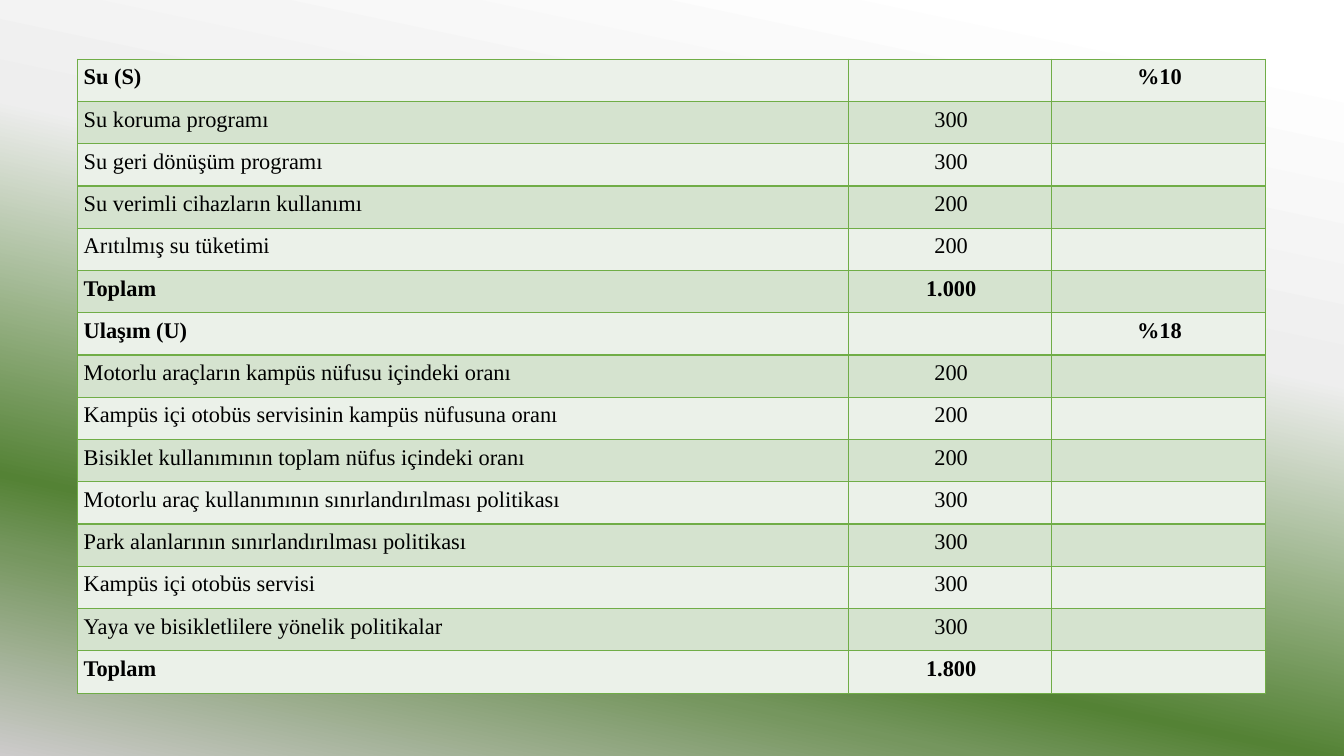
"""Builds a slide with the water and transport scoring table."""
from dataclasses import dataclass

from lxml import etree
from pptx import Presentation
from pptx.dml.color import RGBColor
from pptx.enum.text import PP_ALIGN
from pptx.oxml.ns import qn
from pptx.util import Cm, Pt

LEFT, CENTER = PP_ALIGN.LEFT, PP_ALIGN.CENTER


@dataclass(frozen=True)
class Theme:
    font: str = "Times New Roman"
    size: int = 16
    text: str = "000000"
    border: str = "70AD47"
    bands: tuple = ("EBF1E9", "D5E3CF")
    backdrop: tuple = ((6, "FFFFFF"), (37, "EEEEEE"), (73, "548235"),
                       (80, "75965E"), (100, "CDCBCB"))


theme = Theme()


def write(cell, text, bold=False, align=LEFT, indent=Cm(0)):
    paragraph = cell.text_frame.paragraphs[0]
    paragraph.alignment = align
    paragraph.line_spacing = 1.07
    paragraph.font.size = Pt(theme.size)
    properties = paragraph._p.get_or_add_pPr()
    properties.set("marL", str(indent))
    properties.set("indent", "0")
    if text:
        run = paragraph.add_run()
        run.text = text
        run.font.name = theme.font
        run.font.size = Pt(theme.size)
        run.font.bold = bold
        run.font.color.rgb = RGBColor.from_string(theme.text)


def add_borders(cell):
    properties = cell._tc.get_or_add_tcPr()
    for side in ("lnL", "lnR", "lnT", "lnB"):
        line = etree.SubElement(properties, qn(f"a:{side}"), w=str(Pt(1)))
        line_fill = etree.SubElement(line, qn("a:solidFill"))
        etree.SubElement(line_fill, qn("a:srgbClr"), val=theme.border)


scores = [
    ("Su (S)", "", "%10"),
    ("Su koruma programı", "300", ""),
    ("Su geri dönüşüm programı", "300", ""),
    ("Su verimli cihazların kullanımı", "200", ""),
    ("Arıtılmış su tüketimi", "200", ""),
    ("Toplam", "1.000", ""),
    ("Ulaşım (U)", "", "%18"),
    ("Motorlu araçların kampüs nüfusu içindeki oranı", "200", ""),
    ("Kampüs içi otobüs servisinin kampüs nüfusuna oranı", "200", ""),
    ("Bisiklet kullanımının toplam nüfus içindeki oranı", "200", ""),
    ("Motorlu araç kullanımının sınırlandırılması politikası", "300", ""),
    ("Park alanlarının sınırlandırılması politikası", "300", ""),
    ("Kampüs içi otobüs servisi", "300", ""),
    ("Yaya ve bisikletlilere yönelik politikalar", "300", ""),
    ("Toplam", "1.800", ""),
]
column_widths = (Cm(19.43), Cm(5.11), Cm(5.39))
table_height = Cm(15.98)

deck = Presentation()
deck.slide_width, deck.slide_height = Cm(33.87), Cm(19.05)
slide = deck.slides.add_slide(deck.slide_layouts[6])

backdrop = slide.background.fill
backdrop.gradient()
backdrop.gradient_angle = 360 - 102
stops = next(slide.element.iter(qn("a:gsLst")))
for stop in list(stops):
    stops.remove(stop)
for position, color in theme.backdrop:
    stop = etree.SubElement(stops, qn("a:gs"), pos=str(position * 1000))
    etree.SubElement(stop, qn("a:srgbClr"), val=color)

score_table = slide.shapes.add_table(
    len(scores), len(column_widths), Cm(1.96), Cm(1.49),
    sum(column_widths), table_height).table
score_table.first_row = False
score_table.horz_banding = False
for column, width in zip(score_table.columns, column_widths):
    column.width = width

for row_index, (label, points, weight) in enumerate(scores):
    score_table.rows[row_index].height = table_height // len(scores)
    emphasized = bool(weight) or label == "Toplam"
    for column_index, text in enumerate((label, points, weight)):
        cell = score_table.cell(row_index, column_index)
        cell.margin_left = cell.margin_bottom = Cm(0)
        cell.margin_top, cell.margin_right = Cm(0.1), Cm(0.15)
        add_borders(cell)
        cell.fill.solid()
        cell.fill.fore_color.rgb = RGBColor.from_string(theme.bands[row_index % 2])
        write(cell, text, bold=emphasized,
              align=CENTER if column_index else LEFT,
              indent=Cm(0.2) if column_index else Cm(0.15))

deck.save("out.pptx")
